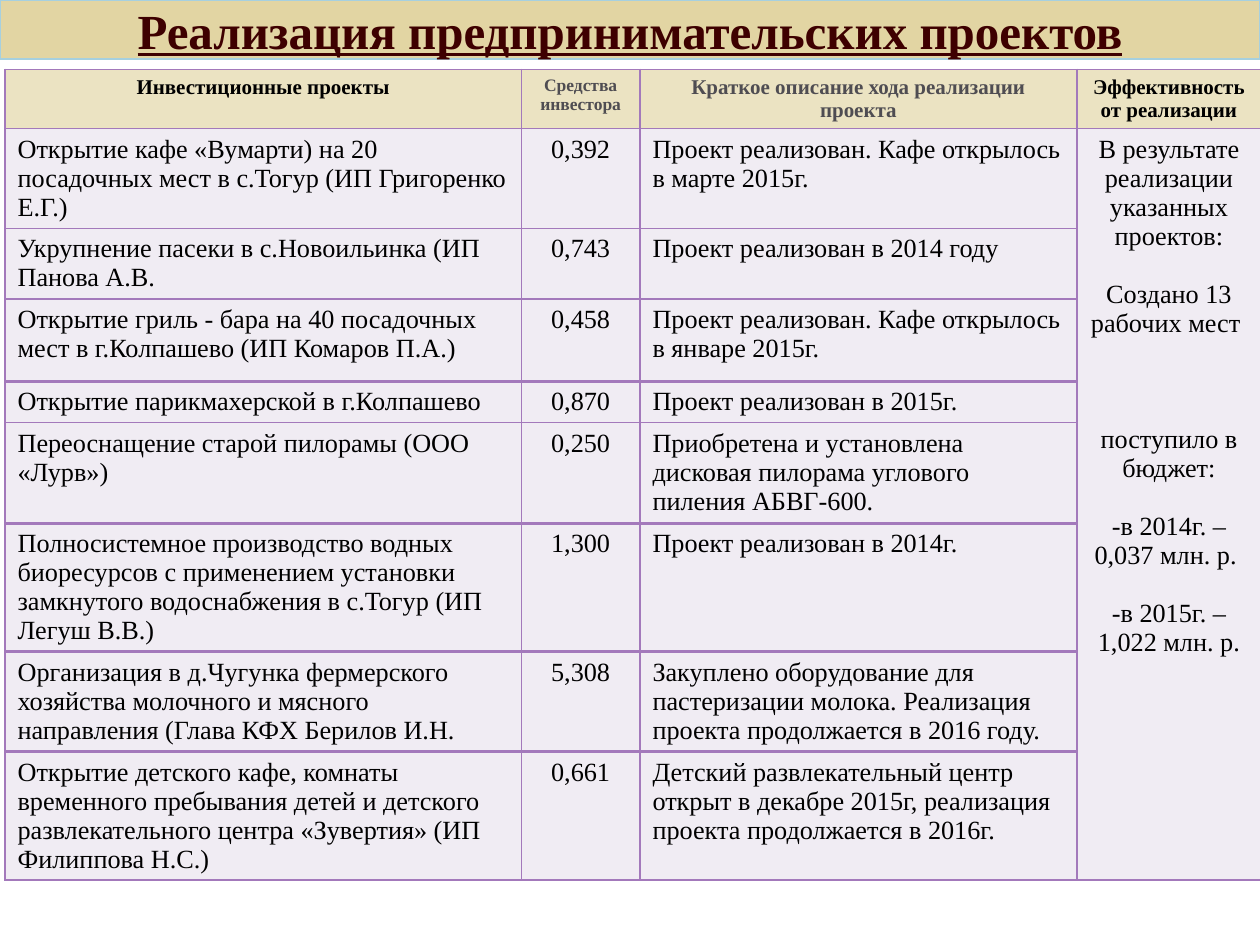
from lxml import etree
from pptx import Presentation
from pptx.dml.color import RGBColor
from pptx.enum.shapes import MSO_SHAPE
from pptx.enum.text import MSO_ANCHOR, PP_ALIGN
from pptx.oxml.ns import qn
from pptx.util import Cm, Pt

LEFT, CENTER = PP_ALIGN.LEFT, PP_ALIGN.CENTER
MIDDLE = MSO_ANCHOR.MIDDLE
RECTANGLE = MSO_SHAPE.RECTANGLE

FONT = "Times New Roman"
BANNER_FILL = RGBColor(0xE2, 0xD5, 0xA3)
BANNER_LINE = RGBColor(0xA6, 0xD0, 0xDF)
TITLE_COLOR = RGBColor(0x3E, 0x00, 0x00)
HEADER_FILL = RGBColor(0xEB, 0xE3, 0xC2)
BODY_FILL = RGBColor(0xF0, 0xEC, 0xF3)
BORDER = RGBColor(0xA3, 0x79, 0xBB)
BLACK = RGBColor(0x00, 0x00, 0x00)
GRAY = RGBColor(0x4F, 0x4D, 0x52)

BODY_SIZE = 15
BLANK_LINE = 16.6  # height of one body line, in points
COLUMN_WIDTHS = [10.41, 2.39, 8.81, 3.71]
ROW_HEIGHTS = [1.19, 2.0, 1.43, 1.65, 0.83, 2.03, 2.59, 2.01, 2.57]
HEAVY_BELOW = {3, 5, 6, 7}  # rows closed by a thicker line

HEADERS = [
    ("Инвестиционные проекты", 12, BLACK),
    ("Средства инвестора", 10, GRAY),
    ("Краткое описание хода реализации проекта", 12, GRAY),
    ("Эффективность от реализации", 12, BLACK),
]
PROJECTS = [
    ("Открытие кафе «Вумарти) на 20 посадочных мест в с.Тогур (ИП Григоренко Е.Г.)",
     "0,392", "Проект реализован. Кафе открылось в марте 2015г."),
    ("Укрупнение пасеки в с.Новоильинка (ИП Панова А.В.",
     "0,743", "Проект реализован в 2014 году"),
    ("Открытие гриль - бара на 40 посадочных мест в г.Колпашево (ИП Комаров П.А.)",
     "0,458", "Проект реализован. Кафе открылось в январе 2015г."),
    ("Открытие парикмахерской в г.Колпашево",
     "0,870", "Проект реализован в 2015г."),
    ("Переоснащение старой пилорамы (ООО «Лурв»)",
     "0,250", "Приобретена и установлена дисковая пилорама углового пиления АБВГ-600."),
    ("Полносистемное производство водных биоресурсов с применением установки "
     "замкнутого водоснабжения в с.Тогур (ИП Легуш В.В.)",
     "1,300", "Проект реализован в 2014г."),
    ("Организация в д.Чугунка фермерского хозяйства молочного и мясного "
     "направления (Глава КФХ Берилов И.Н.",
     "5,308", "Закуплено оборудование для пастеризации молока. Реализация проекта "
     "продолжается в 2016 году."),
    ("Открытие детского кафе, комнаты временного пребывания детей и детского "
     "развлекательного центра «Зувертия» (ИП Филиппова Н.С.)",
     "0,661", "Детский развлекательный центр открыт в декабре 2015г, реализация "
     "проекта продолжается в 2016г."),
]
# Paragraph and the number of line heights left open above it
RESULTS = [
    ("В результате реализации указанных проектов:", 0),
    ("Создано 13 рабочих мест ", 1),
    ("поступило в бюджет:", 3),
    ("-в 2014г. – 0,037 млн. р. ", 1),
    ("-в 2015г. – 1,022 млн. р.", 1),
]


def write(para, text, size, color=BLACK, align=LEFT, bold=False, underline=False):
    para.alignment = align
    span = para.add_run()
    span.text = text
    font = span.font
    font.name, font.size = FONT, Pt(size)
    font.bold, font.underline = bold, underline
    font.color.rgb = color


def style_cell(cell, fill, top, bottom):
    properties = cell._tc.get_or_add_tcPr()
    for side, width in (("L", 1), ("R", 1), ("T", top), ("B", bottom)):
        line = etree.SubElement(properties, qn(f"a:ln{side}"), w=str(Pt(width)))
        solid = etree.SubElement(line, qn("a:solidFill"))
        etree.SubElement(solid, qn("a:srgbClr"), val=str(BORDER))
    cell.fill.solid()
    cell.fill.fore_color.rgb = fill


def add_banner(page, left, top, width, height):
    box = page.shapes.add_shape(RECTANGLE, left, top, width, height)
    box.shadow.inherit = False
    box.fill.solid()
    box.fill.fore_color.rgb = BANNER_FILL
    box.line.color.rgb = BANNER_LINE
    box.line.width = Pt(0.75)
    frame = box.text_frame
    frame.word_wrap = True
    frame.vertical_anchor = MIDDLE
    write(frame.paragraphs[0], "Реализация предпринимательских проектов", 28,
          TITLE_COLOR, CENTER, bold=True, underline=True)


def add_project_table(page, left, top):
    table = page.shapes.add_table(
        len(ROW_HEIGHTS), len(COLUMN_WIDTHS), left, top,
        Cm(sum(COLUMN_WIDTHS)), Cm(sum(ROW_HEIGHTS))).table
    table.first_row = table.horz_banding = False
    for column, width in zip(table.columns, COLUMN_WIDTHS):
        column.width = Cm(width)
    for row, height in zip(table.rows, ROW_HEIGHTS):
        row.height = Cm(height)

    # Fills and borders
    last_column = len(COLUMN_WIDTHS) - 1
    for r, row in enumerate(table.rows):
        for c, cell in enumerate(row.cells):
            heavy = HEAVY_BELOW if c < last_column else set()
            style_cell(cell, BODY_FILL if r else HEADER_FILL,
                       2 if r - 1 in heavy else 1, 2 if r in heavy else 1)

    # Header row
    for c, (text, size, color) in enumerate(HEADERS):
        write(table.cell(0, c).text_frame.paragraphs[0], text, size, color,
              CENTER, bold=True)

    # One row per project
    for r, project in enumerate(PROJECTS, start=1):
        for c, (text, align) in enumerate(zip(project, (LEFT, CENTER, LEFT))):
            write(table.cell(r, c).text_frame.paragraphs[0], text, BODY_SIZE,
                  align=align)

    # Results, merged beside all projects
    results = table.cell(1, last_column)
    results.merge(table.cell(len(PROJECTS), last_column))
    frame = results.text_frame
    for i, (text, gap) in enumerate(RESULTS):
        para = frame.add_paragraph() if i else frame.paragraphs[0]
        para.space_before = Pt(gap * BLANK_LINE)
        write(para, text, BODY_SIZE, align=CENTER)


def main():
    deck = Presentation()
    deck.slide_width, deck.slide_height = Cm(25.4), Cm(19.05)
    page = deck.slides.add_slide(deck.slide_layouts[6])
    add_banner(page, 0, 0, deck.slide_width, Cm(1.19))
    add_project_table(page, Cm(0.1), Cm(1.4))
    deck.save("out.pptx")


if __name__ == "__main__":
    main()
